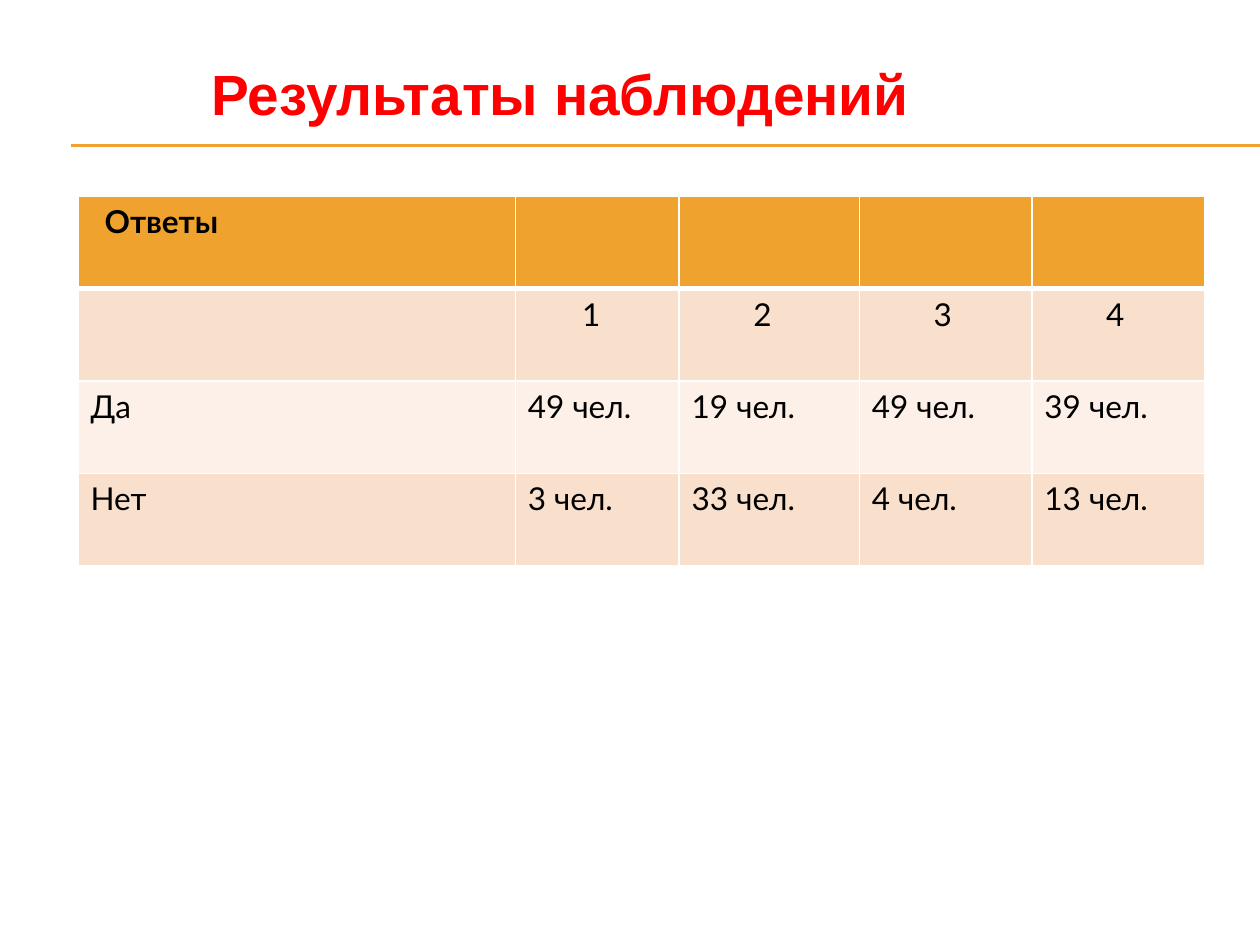
from dataclasses import dataclass

from lxml.etree import SubElement
from pptx import Presentation
from pptx.dml.color import RGBColor
from pptx.enum.shapes import MSO_CONNECTOR
from pptx.enum.text import MSO_ANCHOR
from pptx.oxml.ns import qn
from pptx.util import Inches, Pt


@dataclass(frozen=True)
class Theme:
    accent: str = "F0A22E"
    band_dark: str = "F9E0CD"
    band_light: str = "FCF0E8"
    border: str = "FFFFFF"
    title: str = "FF0000"
    text: str = "000000"
    title_font: str = "Arial"
    body_font: str = "Lato"
    title_size: float = 32.4
    body_size: float = 18


THEME = Theme()
COLUMN_WIDTHS = [3.47, 1.3, 1.43, 1.37, 1.37]
ROWS = [
    ["Ответы", "", "", "", ""],
    ["", "1", "2", "3", "4"],
    ["Да", "49 чел.", "19 чел.", "49 чел.", "39 чел."],
    ["Нет", "3 чел.", "33 чел.", "4 чел.", "13 чел."],
]
ROW_FILLS = [THEME.accent, THEME.band_dark, THEME.band_light, THEME.band_dark]
# Left cell margins that differ from the usual 0.1 inch, by row and column
INDENTS = {(0, 0): 0.21, (1, 1): 0.53, (1, 2): 0.59, (1, 3): 0.59, (1, 4): 0.59}


def write(tf, text, font=THEME.body_font, size=THEME.body_size,
          color=THEME.text, bold=False):
    r = tf.paragraphs[0].add_run()
    r.text = text
    r.font.name = font
    r.font.size = Pt(size)
    r.font.bold = bold
    r.font.color.rgb = RGBColor.from_string(color)


def add_title(slide, text, left, top, width, height):
    tf = slide.shapes.add_textbox(
        Inches(left), Inches(top), Inches(width), Inches(height)).text_frame
    tf.word_wrap = True
    tf.vertical_anchor = MSO_ANCHOR.TOP
    tf.margin_left = Inches(1.35)
    tf.margin_top = tf.margin_right = tf.margin_bottom = 0
    write(tf, text, font=THEME.title_font, size=THEME.title_size,
          color=THEME.title, bold=True)


def add_rule(slide, left, right, y):
    line = slide.shapes.add_connector(
        MSO_CONNECTOR.STRAIGHT, Inches(left), Inches(y), Inches(right), Inches(y))
    line.line.color.rgb = RGBColor.from_string(THEME.accent)
    line.line.width = Pt(0.75)
    SubElement(line.element.spPr, qn("a:effectLst"))


def set_borders(cell, top, bottom):
    """Draw the cell's borders; they must precede its fill in the XML."""
    tc_pr = cell._tc.get_or_add_tcPr()
    for side, width in (("L", 1), ("R", 1), ("T", top), ("B", bottom)):
        ln = SubElement(tc_pr, qn(f"a:ln{side}"), w=str(Pt(width)))
        fill = SubElement(ln, qn("a:solidFill"))
        SubElement(fill, qn("a:srgbClr"), val=THEME.border)


def add_results_table(slide, left, top, width, height):
    table = slide.shapes.add_table(
        len(ROWS), len(COLUMN_WIDTHS),
        Inches(left), Inches(top), Inches(width), Inches(height)).table
    for column, column_width in zip(table.columns, COLUMN_WIDTHS):
        column.width = Inches(column_width)
    for i, (values, fill) in enumerate(zip(ROWS, ROW_FILLS)):
        for j, value in enumerate(values):
            cell = table.cell(i, j)
            set_borders(cell, top=3 if i == 1 else 1, bottom=3 if i == 0 else 1)
            cell.fill.solid()
            cell.fill.fore_color.rgb = RGBColor.from_string(fill)
            cell.margin_left = Inches(INDENTS.get((i, j), 0.1))
            if value:
                write(cell.text_frame, value, bold=i == 0)


def main():
    prs = Presentation()
    prs.slide_width, prs.slide_height = Inches(10), Inches(7.5)
    slide = prs.slides.add_slide(prs.slide_layouts[6])
    for y in (1.15, 1.16):
        add_rule(slide, 0.56, 10, y)
    add_title(slide, "Результаты наблюдений", 0.33, 0.47, 9.5, 0.92)
    add_results_table(slide, 0.62, 1.56, sum(COLUMN_WIDTHS), 2.93)
    prs.save("out.pptx")


if __name__ == "__main__":
    main()
